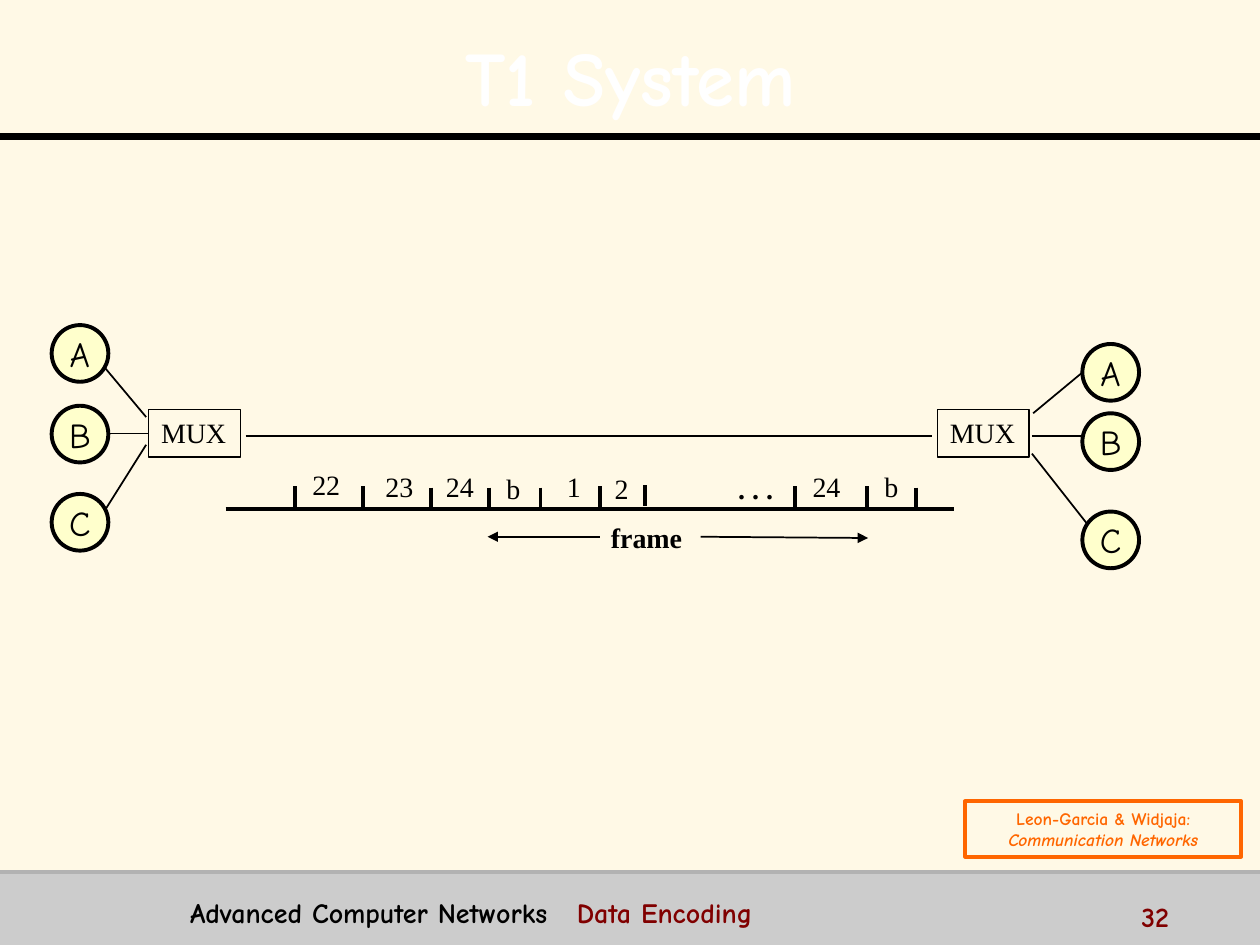
import dataclasses
from typing import Optional

import lxml.etree
import pptx
import pptx.dml.color
import pptx.enum.shapes
import pptx.enum.text
import pptx.oxml
import pptx.oxml.ns
import pptx.util

Inches = pptx.util.Inches
Pt = pptx.util.Pt
ALIGN = pptx.enum.text.PP_ALIGN
ANCHOR = pptx.enum.text.MSO_ANCHOR
SHAPE = pptx.enum.shapes.MSO_SHAPE
COLORS = {
    "paper": "FFF9E6", "footer": "CCCCCC", "footer_rule": "B2B2B2",
    "ink": "000000", "title": "FFFFFF", "station": "FFFFCC",
    "source": "FF6600", "topic": "800000",
}
COMIC = "Comic Neue"
TIMES = "Times New Roman"


@dataclasses.dataclass
class Label:
    text: str
    left: float
    top: float
    width: float
    height: float = 0.36
    bold: bool = False


@dataclasses.dataclass
class Line:
    start: tuple[float, float]
    end: tuple[float, float]
    weight: float = 1
    color: str = "ink"
    arrow: bool = False


@dataclasses.dataclass
class Station:
    name: str
    left: float
    top: float


SLOT_LABELS = [
    Label("22", 2.38, 3.66, 0.42), Label("23", 2.96, 3.68, 0.42),
    Label("24", 3.44, 3.68, 0.42), Label("b", 3.92, 3.69, 0.31),
    Label("1", 4.4, 3.68, 0.31), Label("2", 4.78, 3.69, 0.31),
    Label(". . .", 5.76, 3.69, 0.48, 0.63, bold=True),
    Label("24", 6.35, 3.68, 0.42), Label("b", 6.92, 3.68, 0.31),
    Label("frame", 4.75, 4.08, 0.77, bold=True),
]
SLOT_TICKS = [(2.34, 3.86), (2.88, 3.86), (3.42, 3.87), (3.88, 3.87), (4.29, 3.87),
              (4.76, 3.86), (5.12, 3.85), (6.31, 3.86), (6.88, 3.86), (7.27, 3.87)]
LINKS = [
    Line((0.8, 2.88), (1.16, 3.31)), Line((0.77, 4.15), (1.16, 3.53)),
    Line((1.95, 3.46), (7.4, 3.46)),
    Line((8.2, 3.28), (8.61, 2.94)), Line((8.19, 3.46), (8.61, 3.46)),
    Line((8.19, 3.6), (8.63, 4.16)),
    Line((1.79, 4.04), (7.57, 4.04), 2),
    Line((4.76, 4.26), (3.87, 4.26), arrow=True),
    Line((5.56, 4.26), (6.89, 4.27), arrow=True),
]
STATION_TOPS = {0.41: (2.58, 3.22, 3.92), 8.59: (2.73, 3.28, 4.06)}
STATIONS = [Station(name, left, top)
            for left, tops in STATION_TOPS.items() for name, top in zip("ABC", tops)]


def rgb(name: str):
    return pptx.dml.color.RGBColor.from_string(COLORS[name])


def add_run(paragraph, text: str, *, size: float = 16, font: str = TIMES,
            color: str = "ink", bold: bool = False, italic: bool = False):
    run = paragraph.add_run()
    run.text = text
    run.font.size, run.font.name = Pt(size), font
    run.font.bold, run.font.italic = bold, italic
    run.font.color.rgb = rgb(color)
    return run


def add_box(slide, left: float, top: float, width: float, height: float, *,
            kind=SHAPE.RECTANGLE, fill: Optional[str] = None,
            outline: Optional[str] = None, weight: float = 1):
    shape = slide.shapes.add_shape(kind, Inches(left), Inches(top),
                                   Inches(width), Inches(height))
    shape.shadow.inherit = False
    if fill:
        shape.fill.solid()
        shape.fill.fore_color.rgb = rgb(fill)
    else:
        shape.fill.background()
    if outline:
        shape.line.color.rgb = rgb(outline)
        shape.line.width = Pt(weight)
    else:
        shape.line.fill.background()
    return shape


def first_paragraph(shape, *, align=ALIGN.LEFT, anchor=ANCHOR.TOP, wrap: bool = False):
    frame = shape.text_frame
    frame.word_wrap = wrap
    frame.vertical_anchor = anchor
    paragraph = frame.paragraphs[0]
    paragraph.alignment = align
    return paragraph


def add_text_box(slide, left: float, top: float, width: float, height: float):
    return first_paragraph(slide.shapes.add_textbox(
        Inches(left), Inches(top), Inches(width), Inches(height)))


def add_line(slide, line: Line):
    connector = slide.shapes.add_connector(
        pptx.enum.shapes.MSO_CONNECTOR.STRAIGHT,
        *(Inches(value) for value in line.start + line.end))
    connector.line.color.rgb = rgb(line.color)
    connector.line.width = Pt(line.weight)
    if line.arrow:
        tail = lxml.etree.SubElement(connector.line._get_or_add_ln(),
                                     pptx.oxml.ns.qn("a:tailEnd"))
        tail.set("type", "triangle")
    lxml.etree.SubElement(connector._element.spPr, pptx.oxml.ns.qn("a:effectLst"))
    return connector


def add_mux(slide, left: float):
    shape = add_box(slide, left, 3.25, 0.73, 0.38, outline="ink")
    add_run(first_paragraph(shape), "MUX")
    return shape


def add_station(slide, station: Station) -> None:
    shape = add_box(slide, station.left, station.top, 0.45, 0.45, kind=SHAPE.OVAL,
                    fill="station", outline="ink", weight=2.25)
    paragraph = first_paragraph(shape, align=ALIGN.CENTER, anchor=ANCHOR.MIDDLE)
    add_run(paragraph, station.name, size=20, font=COMIC)


def add_title(slide) -> None:
    title = slide.shapes.title
    title.left, title.top = Inches(0.2), Inches(0.13)
    title.width, title.height = Inches(9.61), Inches(0.87)
    paragraph = first_paragraph(title, align=ALIGN.CENTER, anchor=ANCHOR.MIDDLE, wrap=True)
    paragraph.line_spacing = 1.1
    run = add_run(paragraph, "T1 System", size=44, font=COMIC, color="title", bold=True)
    shadow = pptx.oxml.parse_xml(
        f'<a:effectLst {pptx.oxml.ns.nsdecls("a")}>'
        '<a:outerShdw dist="35921" dir="2700000">'
        f'<a:srgbClr val="{COLORS["ink"]}"/></a:outerShdw></a:effectLst>')
    run.font._element.find(pptx.oxml.ns.qn("a:solidFill")).addnext(shadow)


def add_footer(slide) -> None:
    paragraph = add_text_box(slide, 1.41, 7.06, 7.28, 0.31)
    tabs = lxml.etree.SubElement(paragraph._p.get_or_add_pPr(), pptx.oxml.ns.qn("a:tabLst"))
    lxml.etree.SubElement(tabs, pptx.oxml.ns.qn("a:tab"), pos=str(Inches(3.07)), algn="l")
    add_run(paragraph, "Advanced Computer Networks\t", font=COMIC, bold=True)
    add_run(paragraph, "Data Encoding", font=COMIC, color="topic", bold=True)
    number = add_text_box(slide, 8.96, 7.09, 1, 0.25)
    add_run(number, "32", font=COMIC, color="topic", bold=True)


def add_source(slide) -> None:
    shape = add_box(slide, 7.66, 6.36, 2.19, 0.44, outline="source", weight=2.25)
    paragraph = first_paragraph(shape, align=ALIGN.CENTER, anchor=ANCHOR.MIDDLE, wrap=True)
    style = {"size": 10, "font": COMIC, "color": "source", "bold": True}
    add_run(paragraph, "Leon-Garcia & Widjaja:", **style)
    paragraph = shape.text_frame.add_paragraph()
    paragraph.alignment = ALIGN.CENTER
    add_run(paragraph, "Communication Networks", italic=True, **style)


def main() -> None:
    presentation = pptx.Presentation()
    presentation.slide_width, presentation.slide_height = Inches(10), Inches(7.5)
    slide = presentation.slides.add_slide(presentation.slide_layouts[5])
    slide.background.fill.solid()
    slide.background.fill.fore_color.rgb = rgb("paper")
    add_box(slide, 0, 6.92, 10, 0.58, fill="footer")
    add_line(slide, Line((0, 1.08), (10, 1.08), 4))
    add_line(slide, Line((0, 6.92), (10, 6.92), 2, "footer_rule"))
    add_title(slide)
    left_mux = add_mux(slide, 1.18)
    add_mux(slide, 7.44)
    add_line(slide, Line((0.8, 3.44), (1.18, 3.44))).end_connect(left_mux, 1)
    for line in LINKS + [Line((x, top), (x, top + 0.17), 2) for x, top in SLOT_TICKS]:
        add_line(slide, line)
    for label in SLOT_LABELS:
        paragraph = add_text_box(slide, label.left, label.top, label.width, label.height)
        add_run(paragraph, label.text, bold=label.bold)
    for station in STATIONS:
        add_station(slide, station)
    add_source(slide)
    add_footer(slide)
    presentation.save("out.pptx")


if __name__ == "__main__":
    main()
